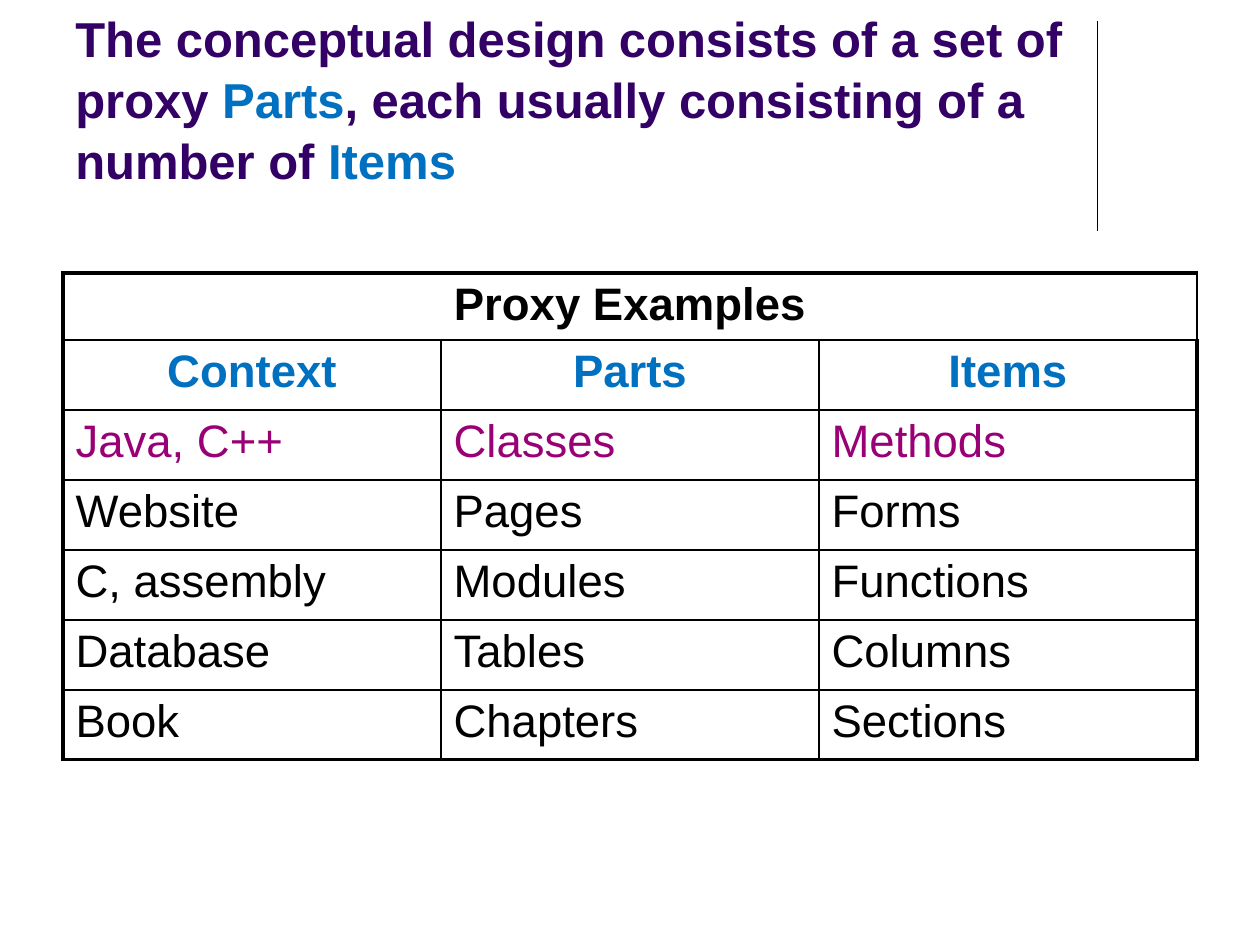
from typing import NamedTuple

import pptx
import pptx.dml.color
import pptx.enum.shapes
import pptx.enum.text
import pptx.oxml
import pptx.oxml.ns
import pptx.util
from pptx.util import Cm, Pt

FONT = "Arial"
BLACK, BLUE, PLUM, NAVY = "000000", "0070C0", "9A0075", "330066"
THIN, THICK = Pt(1), Pt(2.25)
LEFT = Cm(1.27)
CENTER = pptx.enum.text.PP_ALIGN.CENTER


class Run(NamedTuple):
    text: str
    color: str = BLACK
    bold: bool = False


class Row(NamedTuple):
    words: tuple[str, ...]
    color: str = BLACK
    head: bool = False


TITLE = [
    Run("The conceptual design consists of a set of proxy ", NAVY, True),
    Run("Parts", BLUE, True),
    Run(", each usually consisting of a number of ", NAVY, True),
    Run("Items", BLUE, True),
]
ROWS = [
    Row(("Proxy Examples",), head=True),
    Row(("Context", "Parts", "Items"), BLUE, True),
    Row(("Java, C++", "Classes", "Methods"), PLUM),
    Row(("Website", "Pages", "Forms")),
    Row(("C, assembly", "Modules", "Functions")),
    Row(("Database", "Tables", "Columns")),
    Row(("Book", "Chapters", "Sections")),
]


def paint(target, color: str) -> None:
    """Set the colour of a font or a line."""
    fill = target.fill
    fill.solid()
    fill.fore_color.rgb = pptx.dml.color.RGBColor.from_string(color)


def add_run(para, run: Run, size: float) -> None:
    part = para.add_run()
    part.text = run.text
    part.font.name = FONT
    part.font.size = Pt(size)
    part.font.bold = run.bold
    paint(part.font, run.color)


def set_edge(cell, side: str, width: int) -> None:
    """Draw one border; side is L, R, T or B."""
    xml = (
        f'<a:ln{side} {pptx.oxml.ns.nsdecls("a")} w="{int(width)}">'
        f'<a:solidFill><a:srgbClr val="{BLACK}"/></a:solidFill></a:ln{side}>'
    )
    cell._tc.get_or_add_tcPr().append(pptx.oxml.parse_xml(xml))


def add_title(slide) -> None:
    box = slide.shapes.add_textbox(LEFT, Cm(0.33), Cm(20.96), Cm(3.61))
    frame = box.text_frame
    frame.word_wrap = True
    frame.vertical_anchor = pptx.enum.text.MSO_ANCHOR.BOTTOM
    para = frame.paragraphs[0]
    para.line_spacing = 1.04
    for run in TITLE:
        add_run(para, run, 28)


def add_rule(slide) -> None:
    kind = pptx.enum.shapes.MSO_CONNECTOR.STRAIGHT
    rule = slide.shapes.add_connector(kind, Cm(22.12), Cm(0.43), Cm(22.12), Cm(4.65))
    rule.line.width = Pt(0.75)
    paint(rule.line, BLACK)
    rule._element.spPr.append(
        pptx.oxml.parse_xml(f'<a:effectLst {pptx.oxml.ns.nsdecls("a")}/>')
    )


def add_grid(slide) -> None:
    count, cols = len(ROWS), 3
    tall, short = Cm(1.41), Cm(1.3)
    frame = slide.shapes.add_table(
        count, cols, LEFT, Cm(5.5), Cm(22.86), short + tall * (count - 1)
    )
    table = frame.table
    table.first_row = table.horz_banding = False
    for i, row in enumerate(ROWS):
        table.rows[i].height = tall if i else short
        for j in range(cols):
            cell = table.cell(i, j)
            ends = {"L": j == 0, "R": j == cols - 1, "T": i == 0, "B": i == count - 1}
            for side, outer in ends.items():
                set_edge(cell, side, THICK if outer else THIN)
            cell.fill.background()
        for j, word in enumerate(row.words):
            para = table.cell(i, j).text_frame.paragraphs[0]
            if row.head:
                para.alignment = CENTER
            add_run(para, Run(word, row.color, row.head), 26)
    table.cell(0, 0).merge(table.cell(0, cols - 1))


def main() -> None:
    deck = pptx.Presentation()
    deck.slide_width, deck.slide_height = Cm(25.4), Cm(19.05)
    slide = deck.slides.add_slide(deck.slide_layouts[6])
    add_rule(slide)
    add_title(slide)
    add_grid(slide)
    deck.save("out.pptx")


if __name__ == "__main__":
    main()
